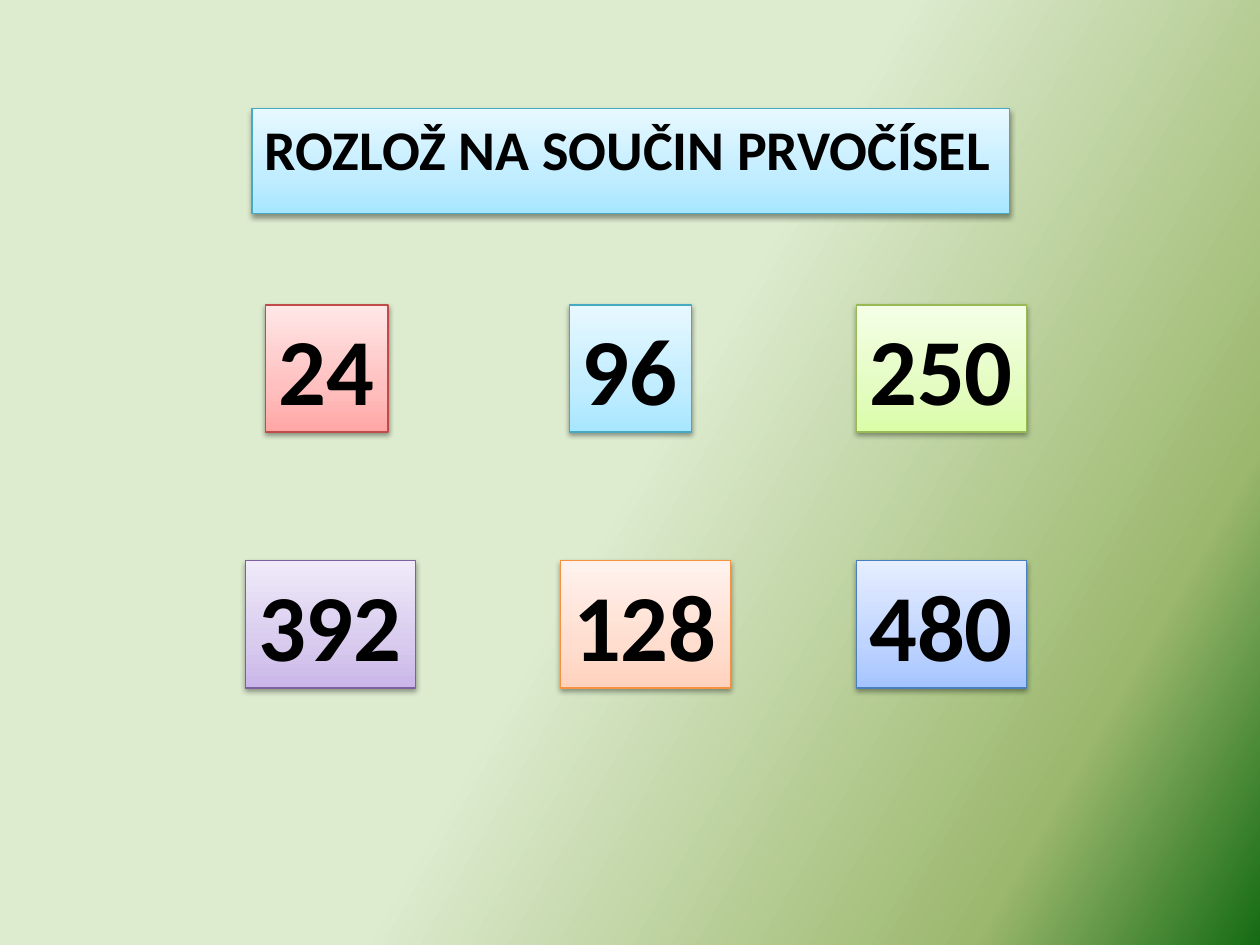
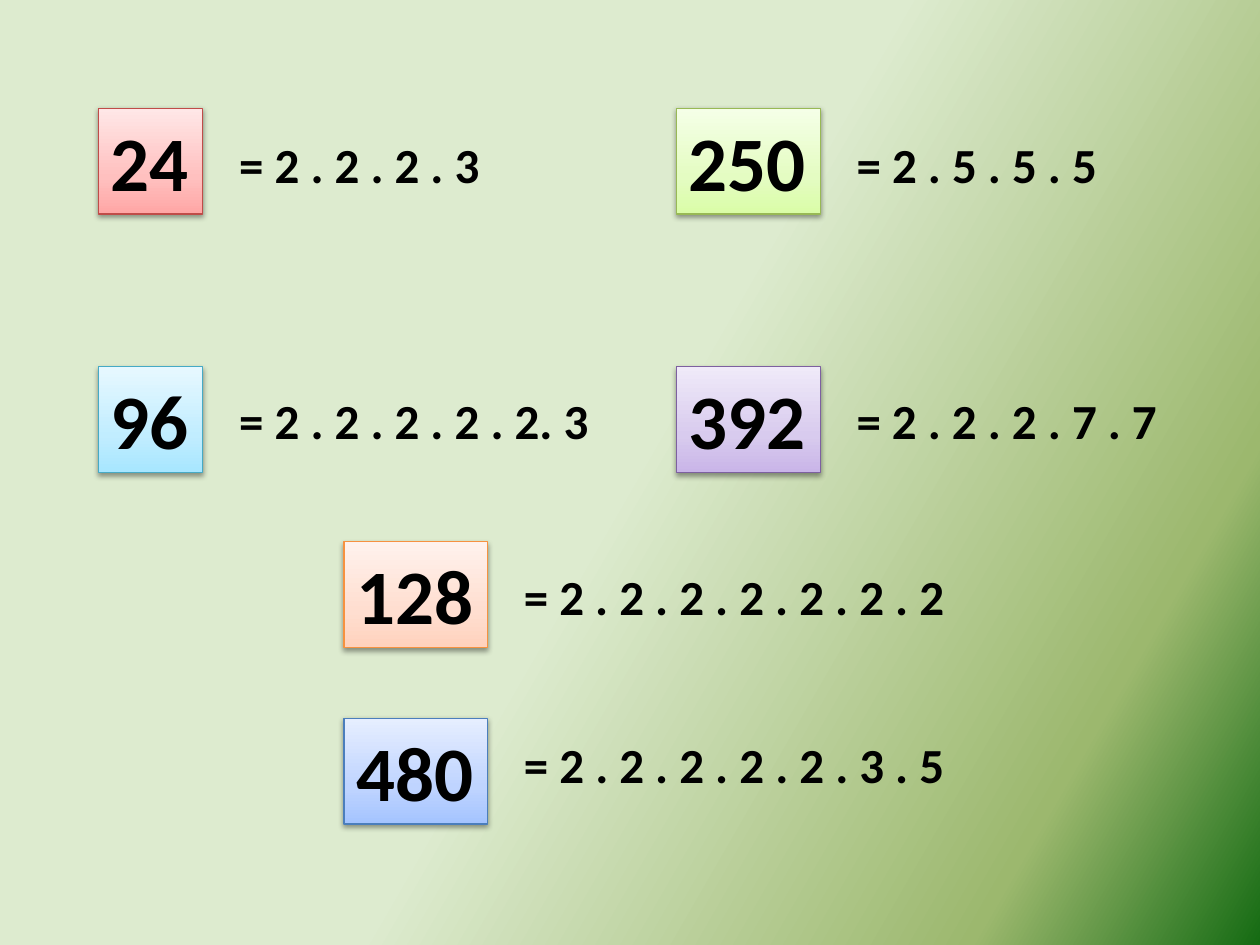
from collections import namedtuple

from lxml.etree import SubElement
from pptx import Presentation
from pptx.dml.color import RGBColor
from pptx.enum.shapes import MSO_SHAPE
from pptx.enum.text import MSO_ANCHOR, MSO_AUTO_SIZE, PP_ALIGN
from pptx.oxml.ns import qn
from pptx.util import Inches, Pt

FONT = "Calibri"
BLACK = RGBColor(0x00, 0x00, 0x00)
TITLE_ONLY, BLANK = 5, 6

Palette = namedtuple("Palette", "dark middle light outline")


def palette(*hex_codes):
    return Palette(*(RGBColor.from_string(code) for code in hex_codes))


RED = palette("FFA6A5", "FFC0BF", "FFE7E7", "BF4C48")
AQUA = palette("A7E6FF", "C1EDFF", "E7F8FF", "46AAC5")
GREEN = palette("DAFDA7", "E4FCC2", "F5FFE7", "98B955")
PURPLE = palette("C9B5E8", "D8CBEE", "F0EAF9", "7D60A0")
ORANGE = palette("FFD2BD", "FFDED0", "FFF2ED", "F69240")
BLUE = palette("A4C4FF", "BFD4FF", "E6EEFF", "4B7EBC")
NUMBER_PALETTES = {"24": RED, "96": AQUA, "250": GREEN,
                   "392": PURPLE, "128": ORANGE, "480": BLUE}

BACKGROUND_STOPS = [
    (50, RGBColor(0xDD, 0xEB, 0xCF)),
    (84, RGBColor(0x9C, 0xB8, 0x6E)),
    (100, RGBColor(0x15, 0x6B, 0x13)),
]

# Number boxes: text size, height, and width by count of digits
BoxSize = namedtuple("BoxSize", "points height widths")
TASK_BOX = BoxSize(54, 1.01, {2: 0.97, 3: 1.35})
ANSWER_BOX = BoxSize(44, 0.84, {2: 0.83, 3: 1.14})
ANSWER_GAP = 0.19

# number, left, top
TASKS = [
    ("24", 2.11, 2.42), ("96", 4.52, 2.42), ("250", 6.8, 2.42),
    ("392", 1.95, 4.45), ("128", 4.45, 4.45), ("480", 6.8, 4.45),
]

# number, left, top, factors, top of factors, width of factors
ANSWERS = [
    ("24", 0.78, 0.86, "= 2 . 2 . 2 . 3", 1.02, 2.12),
    ("96", 0.78, 2.91, "= 2 . 2 . 2 . 2 . 2. 3", 3.05, 2.99),
    ("250", 5.37, 0.86, "= 2 . 5 . 5 . 5", 1.02, 2.21),
    ("392", 5.37, 2.91, "= 2 . 2 . 2 . 7 . 7", 3.05, 2.6),
    ("128", 2.73, 4.3, "= 2 . 2 . 2 . 2 . 2 . 2 . 2", 4.45, 3.56),
    ("480", 2.73, 5.7, "= 2 . 2 . 2 . 2 . 2 . 3 . 5", 5.78, 3.59),
]


def add_color(parent, color):
    return SubElement(parent, qn("a:srgbClr"), val=str(color))


def set_gradient(fill, element, stops, angle):
    """Fill with (percent, colour) stops; the angle runs counter-clockwise."""
    fill.gradient()
    fill.gradient_angle = angle
    stop_list = element.find(".//" + qn("a:gsLst"))
    for default_stop in list(stop_list):
        stop_list.remove(default_stop)
    for percent, color in stops:
        stop = SubElement(stop_list, qn("a:gs"), pos=str(percent * 1000))
        add_color(stop, color)


def add_soft_shadow(shape):
    shape.shadow.inherit = False
    effects = shape._element.spPr.find(qn("a:effectLst"))
    shadow = SubElement(effects, qn("a:outerShdw"), blurRad=str(Pt(3.1)),
                        dist=str(Pt(1.6)), dir="5400000", rotWithShape="0")
    SubElement(add_color(shadow, BLACK), qn("a:alpha"), val="38000")


def style_card(shape, colors):
    """Give a shape the gradient, outline and shadow of a number card."""
    stops = [(0, colors.dark), (35, colors.middle), (100, colors.light)]
    set_gradient(shape.fill, shape._element, stops, 90)
    shape.line.color.rgb = colors.outline
    shape.line.width = Pt(0.75)
    add_soft_shadow(shape)


def write(shape, text, points):
    frame = shape.text_frame
    frame.text = text
    frame.word_wrap = False
    frame.auto_size = MSO_AUTO_SIZE.SHAPE_TO_FIT_TEXT
    frame.vertical_anchor = MSO_ANCHOR.TOP
    paragraph = frame.paragraphs[0]
    paragraph.alignment = PP_ALIGN.LEFT
    font = paragraph.runs[0].font
    font.name = FONT
    font.size = Pt(points)
    font.bold = True
    font.color.rgb = BLACK


def set_title(slide, text):
    title = slide.shapes.title
    title.left, title.top = Inches(2), Inches(0.86)
    title.width, title.height = Inches(6.01), Inches(0.64)
    style_card(title, AQUA)
    write(title, text, 32)


def add_number(slide, number, left, top, size):
    """Add a number card and return its right edge in inches."""
    width = size.widths[len(number)]
    card = slide.shapes.add_shape(MSO_SHAPE.RECTANGLE, Inches(left), Inches(top),
                                  Inches(width), Inches(size.height))
    style_card(card, NUMBER_PALETTES[number])
    write(card, number, size.points)
    return left + width


def add_factors(slide, factors, left, top, width):
    box = slide.shapes.add_textbox(Inches(left), Inches(top),
                                   Inches(width), Inches(0.57))
    write(box, factors, 28)


def build_task_slide(prs):
    slide = prs.slides.add_slide(prs.slide_layouts[TITLE_ONLY])
    set_title(slide, "ROZLOŽ NA SOUČIN PRVOČÍSEL")
    for number, left, top in TASKS:
        add_number(slide, number, left, top, TASK_BOX)


def build_answer_slide(prs):
    slide = prs.slides.add_slide(prs.slide_layouts[BLANK])
    for number, left, top, factors, factors_top, factors_width in ANSWERS:
        right = add_number(slide, number, left, top, ANSWER_BOX)
        add_factors(slide, factors, right + ANSWER_GAP, factors_top, factors_width)


def main():
    prs = Presentation()
    prs.slide_width, prs.slide_height = Inches(10), Inches(7.5)
    master = prs.slide_master
    set_gradient(master.background.fill, master.element, BACKGROUND_STOPS, 330)
    build_task_slide(prs)
    build_answer_slide(prs)
    prs.save("out.pptx")


if __name__ == "__main__":
    main()
